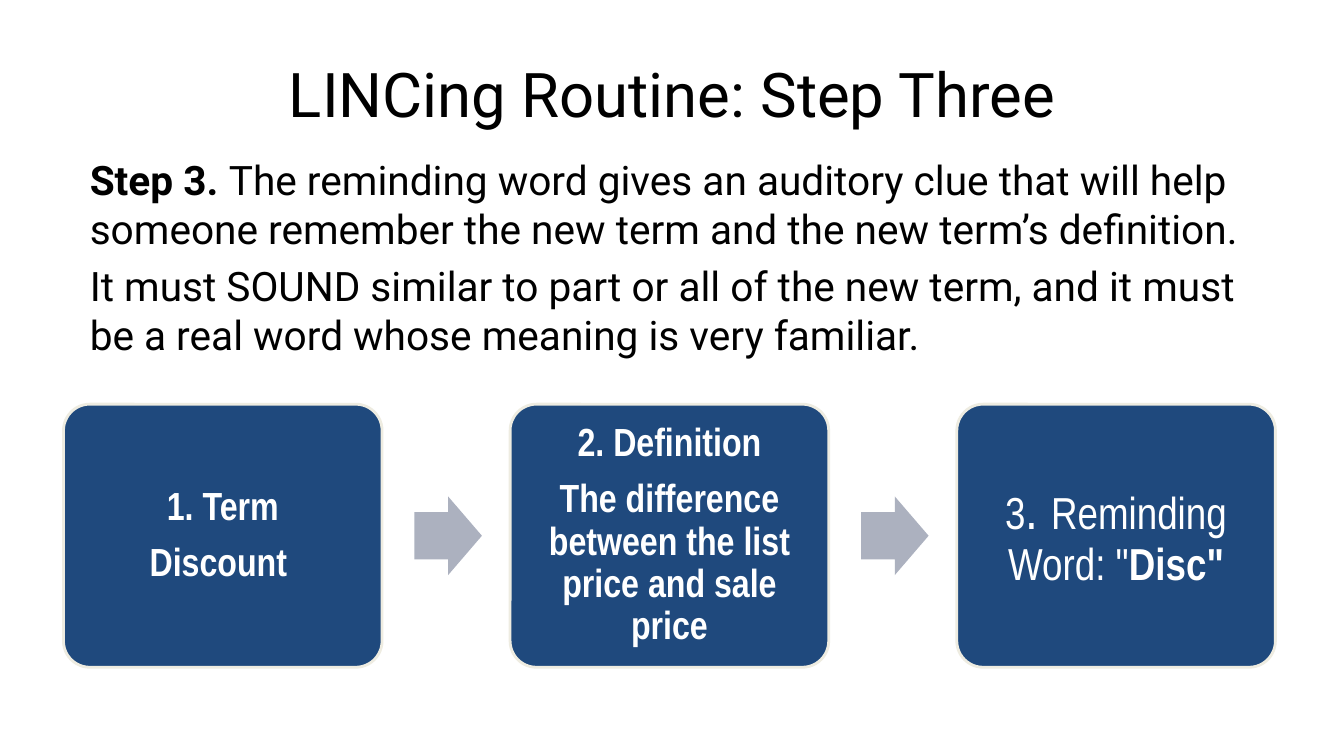
from pptx import Presentation
from pptx.dml.color import RGBColor
from pptx.enum.shapes import MSO_SHAPE
from pptx.enum.text import MSO_ANCHOR, MSO_AUTO_SIZE, PP_ALIGN
from pptx.util import Inches, Pt
from lxml.etree import SubElement
from pptx.oxml.ns import qn

COLORS = {"text": "000000", "card": "1F497D", "border": "EEECE1",
          "card_text": "FFFFFF", "arrow": "ACB1BF"}
BODY_FONT, CARD_FONT = "Roboto", "Arial Narrow"

EXPLANATION = [
    [("Step 3. ", True),
     ("The reminding word gives an auditory clue that will help someone "
      "remember the new term and the new term’s definition.", False)],
    [("It must SOUND similar to part or all of the new term, and it must be "
      "a real word whose meaning is very familiar.", False)],
]

# Each card is a list of paragraphs; each run is (text, size, bold).
CARDS = [
    [[("1. Term", 28, True)], [("Discount ", 28, True)]],
    [[("2. Definition", 28, True)],
     [("The difference between the list price and sale price", 28, True)]],
    [[("3", 32, False), (". ", 40, False),
      ('Reminding Word: "', 32, False), ('Disc"', 32, True)]],
]


def color(name):
    return RGBColor.from_string(COLORS[name])


def place(shape, left, top, width, height):
    shape.left, shape.top = Inches(left), Inches(top)
    shape.width, shape.height = Inches(width), Inches(height)


def set_font(font, name, size, color_name):
    font.name, font.size = name, Pt(size)
    font.color.rgb = color(color_name)


def add_heading(slide, left, top, width, height):
    heading = slide.shapes.title
    place(heading, left, top, width, height)
    frame = heading.text_frame
    frame.text = "LINCing Routine: Step Three"
    frame.vertical_anchor = MSO_ANCHOR.MIDDLE
    frame.auto_size = MSO_AUTO_SIZE.NONE
    frame.paragraphs[0].alignment = PP_ALIGN.CENTER
    set_font(frame.paragraphs[0].font, BODY_FONT, 44, "text")


def add_explanation(slide, left, top, width, height):
    explanation = slide.placeholders[1]
    place(explanation, left, top, width, height)
    frame = explanation.text_frame
    frame.auto_size = MSO_AUTO_SIZE.NONE
    for i, runs in enumerate(EXPLANATION):
        paragraph = frame.add_paragraph() if i else frame.paragraphs[0]
        paragraph.space_before = Pt(5.8)
        properties = paragraph._p.get_or_add_pPr()
        properties.set("marL", str(Inches(0.12)))
        properties.set("indent", "0")
        SubElement(properties, qn("a:buNone"))
        set_font(paragraph.font, BODY_FONT, 29, "text")
        for text, bold in runs:
            run = paragraph.add_run()
            run.text, run.font.bold = text, bold


def add_block(slide, kind, fill, left, top, width, height):
    block = slide.shapes.add_shape(kind, Inches(left), Inches(top),
                                   Inches(width), Inches(height))
    block.shadow.inherit = False
    block.fill.solid()
    block.fill.fore_color.rgb = color(fill)
    return block


def add_card(slide, paragraphs, left, top, width, height):
    card = add_block(slide, MSO_SHAPE.ROUNDED_RECTANGLE, "card",
                     left, top, width, height)
    card.adjustments[0] = 0.1
    card.line.color.rgb = color("border")
    card.line.width = Pt(2)
    frame = card.text_frame
    frame.word_wrap = True
    frame.vertical_anchor = MSO_ANCHOR.MIDDLE
    frame.margin_left = frame.margin_right = Inches(0.12)
    frame.margin_top = frame.margin_bottom = Inches(0.12)
    for i, runs in enumerate(paragraphs):
        paragraph = frame.add_paragraph() if i else frame.paragraphs[0]
        paragraph.alignment = PP_ALIGN.CENTER
        paragraph.line_spacing = 0.9
        paragraph.space_after = Pt(runs[0][1] * 0.35)
        set_font(paragraph.font, CARD_FONT, runs[0][1], "card_text")
        for text, size, bold in runs:
            run = paragraph.add_run()
            run.text = text
            run.font.size, run.font.bold = Pt(size), bold


def add_process(slide, left, top, width, height):
    """Spread the cards evenly over the box, with an arrow in each gap."""
    card_width, arrow_width, arrow_height = 3.16, 0.67, 0.78
    step = (width - card_width) / (len(CARDS) - 1)
    for i, paragraphs in enumerate(CARDS):
        card_left = left + i * step
        if i:
            arrow = add_block(slide, MSO_SHAPE.RIGHT_ARROW, "arrow",
                              card_left - 0.95,
                              top + (height - arrow_height) / 2,
                              arrow_width, arrow_height)
            arrow.adjustments[0] = 0.6
            arrow.adjustments[1] = 0.5
            arrow.line.fill.background()
        add_card(slide, paragraphs, card_left, top, card_width, height)


def main():
    deck = Presentation()
    deck.slide_width, deck.slide_height = Inches(13.33), Inches(7.5)
    slide = deck.slides.add_slide(deck.slide_layouts[1])
    add_heading(slide, 0.67, 0.3, 12, 1.25)
    add_explanation(slide, 0.67, 1.49, 11.96, 2.62)
    add_process(slide, 0.63, 4.01, 12.02, 2.61)
    deck.save("out.pptx")


if __name__ == "__main__":
    main()
